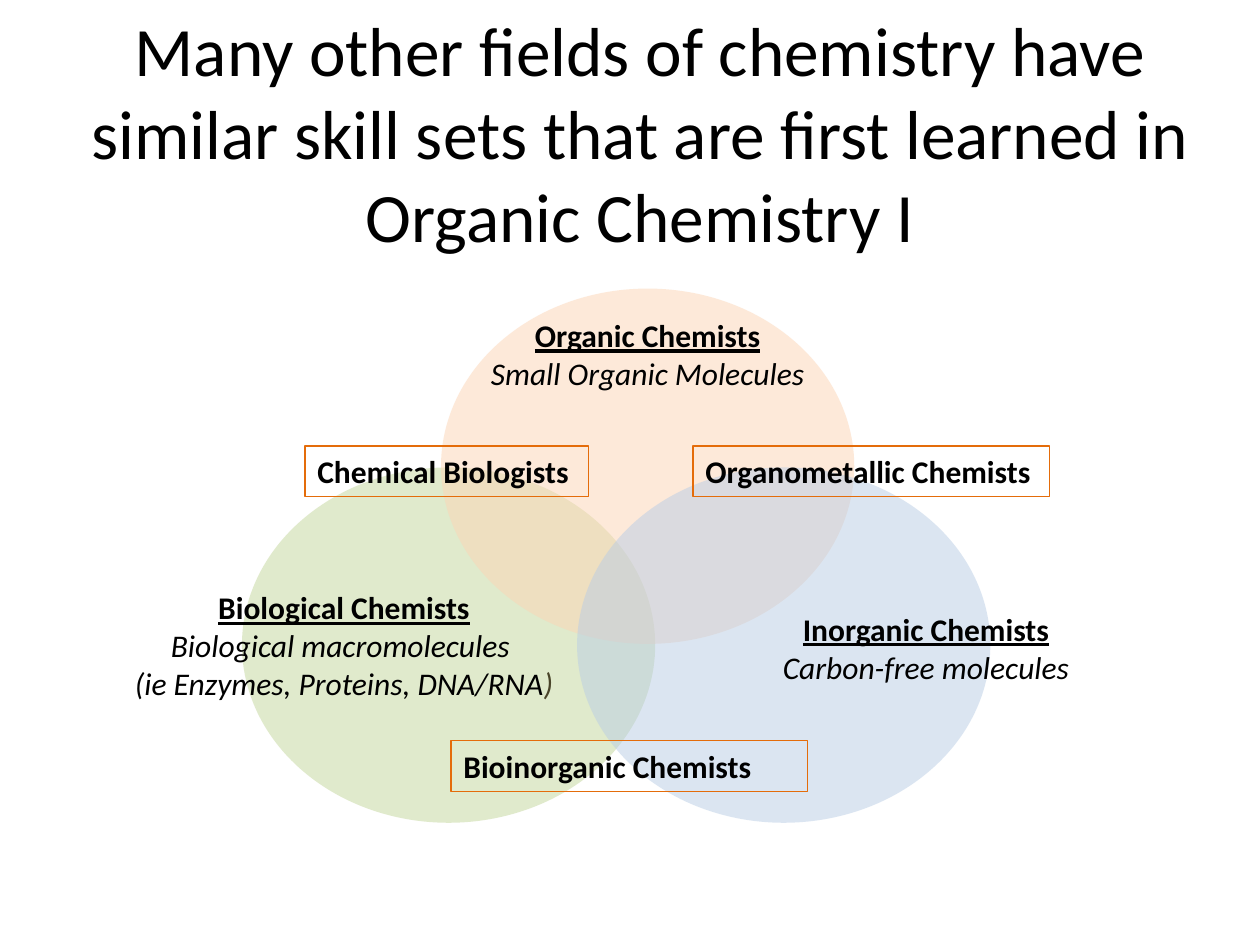
"""Build a Venn diagram slide of chemistry fields that share skill sets."""
from dataclasses import dataclass

from lxml import etree
from pptx import Presentation
from pptx.dml.color import RGBColor
from pptx.enum import shapes, text
from pptx.oxml import ns
from pptx.util import Inches, Pt


@dataclass(frozen=True)
class Theme:
    font: str = "Calibri"
    title_size: float = 39.6
    label_size: float = 18
    ink: str = "000000"
    closing_ink: str = "4A452A"
    border: str = "E46C0A"
    biological: str = "C3D69B"
    organic: str = "FCD5B5"
    inorganic: str = "B9CDE5"
    opacity: int = 50


theme = Theme()


def style(paragraph, size, bold=False, italic=False, underline=False):
    font = paragraph.font
    font.name, font.size = theme.font, Pt(size)
    font.bold, font.italic, font.underline = bold, italic, underline
    font.color.rgb = RGBColor.from_string(theme.ink)


def add_label(box, lines, wrap):
    label = slide.shapes.add_textbox(*map(Inches, box))
    frame = label.text_frame
    frame.word_wrap = wrap
    frame.auto_size = text.MSO_AUTO_SIZE.SHAPE_TO_FIT_TEXT
    frame.text = "\n".join(lines)
    return label


prs = Presentation()
prs.slide_width, prs.slide_height = Inches(10), Inches(7.5)
slide = prs.slides.add_slide(prs.slide_layouts[5])

title = slide.shapes.title
title.left, title.top = Inches(0.58), Inches(0.42)
title.width, title.height = Inches(9), Inches(1.25)
title.text_frame.text = (
    "Many other fields of chemistry have similar skill sets "
    "that are first learned in Organic Chemistry I"
)
title.text_frame.word_wrap = True
title.text_frame.auto_size = text.MSO_AUTO_SIZE.NONE
title.text_frame.vertical_anchor = text.MSO_ANCHOR.MIDDLE
title.text_frame.paragraphs[0].alignment = text.PP_ALIGN.CENTER
style(title.text_frame.paragraphs[0], theme.title_size)

for left, top, color in (
    (1.92, 3.71, theme.biological),
    (3.5, 2.29, theme.organic),
    (4.58, 3.71, theme.inorganic),
):
    field = slide.shapes.add_shape(
        shapes.MSO_SHAPE.OVAL, Inches(left), Inches(top), Inches(3.28), Inches(2.82)
    )
    field.shadow.inherit = False
    field.line.fill.background()
    field.fill.solid()
    field.fill.fore_color.rgb = RGBColor.from_string(color)
    swatch = field.fill._xPr.find(".//" + ns.qn("a:srgbClr"))
    etree.SubElement(swatch, ns.qn("a:alpha"), val=str(theme.opacity * 1000))

for box, lines, wrap in (
    ((3.75, 2.46, 2.78, 0.71), ("Organic Chemists", "Small Organic Molecules"), False),
    (
        (0.92, 4.62, 3.62, 1.01),
        (
            "Biological Chemists",
            "Biological macromolecules ",
            "(ie Enzymes, Proteins, DNA/RNA",
        ),
        False,
    ),
    ((5.92, 4.79, 2.86, 1.01), ("Inorganic Chemists", "Carbon-free molecules"), True),
):
    chemists = add_label(box, lines, wrap)
    heading, *details = chemists.text_frame.paragraphs
    style(heading, theme.label_size, bold=True, underline=True)
    for detail in details:
        style(detail, theme.label_size, italic=True)
    for line in (heading, *details):
        line.alignment = text.PP_ALIGN.CENTER
    if lines[0] == "Biological Chemists":
        closing = details[-1].add_run()
        closing.text = ")"
        closing.font.color.rgb = RGBColor.from_string(theme.closing_ink)

for left, top, width, name in (
    (5.5, 3.54, 2.83, "Organometallic Chemists"),
    (2.42, 3.54, 2.25, "Chemical Biologists"),
    (3.58, 5.88, 2.83, "Bioinorganic Chemists"),
):
    overlap = add_label((left, top, width, 0.4), (name,), True)
    overlap.line.color.rgb = RGBColor.from_string(theme.border)
    overlap.line.width = Pt(0.75)
    style(overlap.text_frame.paragraphs[0], theme.label_size, bold=True)

prs.save("out.pptx")
